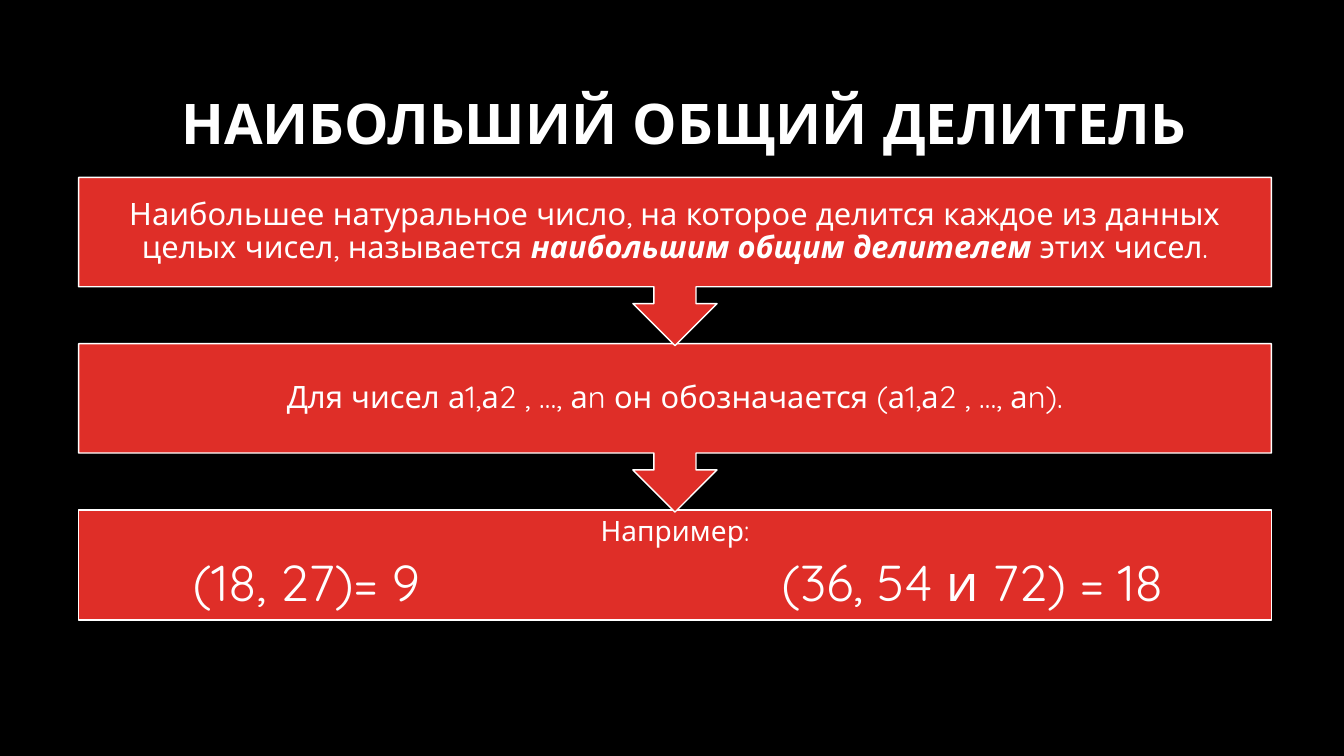
from dataclasses import dataclass

from lxml import etree
from pptx import Presentation
from pptx.dml.color import RGBColor
from pptx.enum.shapes import MSO_SHAPE
from pptx.enum.text import MSO_ANCHOR, PP_ALIGN
from pptx.oxml.ns import qn
from pptx.util import Emu, Pt

RECTANGLE = MSO_SHAPE.RECTANGLE
DOWN_CALLOUT = MSO_SHAPE.DOWN_ARROW_CALLOUT
MIDDLE = MSO_ANCHOR.MIDDLE
CENTER = PP_ALIGN.CENTER
LEFT = PP_ALIGN.LEFT

EMU_PER_PX = 9144
FONT = "Quicksand"
WHITE, RED, BLACK = "FFFFFF", "DF2E28", "000000"
STEP_LEFT, STEP_WIDTH = 78, 1183
FIRST_TOP, STEP_PITCH = 176, 165
TAB_STOPS = (97, 681)


@dataclass(frozen=True)
class Phrase:
    text: str
    emphasis: bool = False


@dataclass(frozen=True)
class Line:
    phrases: tuple[Phrase, ...]
    size: int
    align: PP_ALIGN = CENTER
    tabs: tuple[int, ...] = ()


@dataclass(frozen=True)
class Step:
    outline: MSO_SHAPE
    height: int
    inset: int
    lines: tuple[Line, ...]


STEPS = (
    Step(DOWN_CALLOUT, 167, 17, (
        Line((
            Phrase("Наибольшее натуральное число, на которое делится "
                   "каждое из данных целых чисел, называется "),
            Phrase("наибольшим общим делителем ", emphasis=True),
            Phrase("этих чисел."),
        ), 22),
    )),
    Step(DOWN_CALLOUT, 167, 17, (
        Line((Phrase("Для чисел а1,а2 , …, аn он обозначается (а1,а2 , …, аn)."),), 22),
    )),
    Step(RECTANGLE, 109, 16, (
        Line((Phrase("Например:"),), 20),
        Line((Phrase("\t(18, 27)= 9\t(36, 54 и 72) = 18"),), 36, LEFT, TAB_STOPS),
    )),
)


def px(length: int) -> Emu:
    return Emu(length * EMU_PER_PX)


def color(value: str) -> RGBColor:
    return RGBColor.from_string(value)


def add_tabs(paragraph, stops: tuple[int, ...]) -> None:
    tab_list = etree.SubElement(paragraph._p.get_or_add_pPr(), qn("a:tabLst"))
    for stop in stops:
        etree.SubElement(tab_list, qn("a:tab"), pos=str(px(stop)), algn="l")


def write_lines(frame, lines: tuple[Line, ...], inset: int) -> None:
    frame.word_wrap = True
    frame.vertical_anchor = MIDDLE
    frame.margin_left = frame.margin_right = px(inset)
    frame.margin_top = frame.margin_bottom = px(inset)
    frame.text = "\n".join("".join(p.text for p in line.phrases) for line in lines)
    for paragraph, line in zip(frame.paragraphs, lines):
        if line.tabs:
            add_tabs(paragraph, line.tabs)
        paragraph.alignment = line.align
        paragraph.line_spacing = 0.9
        if line is not lines[-1]:
            paragraph.space_after = Pt(line.size * 0.35)
        paragraph.text = ""
        for phrase in line.phrases:
            run = paragraph.add_run()
            run.text = phrase.text
            run.font.name = FONT
            run.font.size = Pt(line.size)
            run.font.color.rgb = color(WHITE)
            run.font.bold = run.font.italic = phrase.emphasis


def add_title(slide) -> None:
    title = slide.shapes.add_textbox(px(136), px(55), px(1084), px(141))
    heading = Line((Phrase("НАИБОЛЬШИЙ ОБЩИЙ ДЕЛИТЕЛЬ"),), 40)
    write_lines(title.text_frame, (heading,), 10)
    title.text_frame.paragraphs[0].runs[0].font.bold = True


def add_step(slide, step: Step, top: int) -> None:
    panel = slide.shapes.add_shape(
        step.outline, px(STEP_LEFT), px(top), px(STEP_WIDTH), px(step.height))
    panel.shadow.inherit = False
    panel.fill.solid()
    panel.fill.fore_color.rgb = color(RED)
    panel.line.color.rgb = color(WHITE)
    panel.line.width = Pt(1)
    write_lines(panel.text_frame, step.lines, step.inset)


def main() -> None:
    presentation = Presentation()
    presentation.slide_width, presentation.slide_height = px(1333), px(750)
    slide = presentation.slides.add_slide(presentation.slide_layouts[6])
    slide.background.fill.solid()
    slide.background.fill.fore_color.rgb = color(BLACK)
    add_title(slide)
    for index, step in reversed(list(enumerate(STEPS))):
        add_step(slide, step, FIRST_TOP + index * STEP_PITCH)
    presentation.save("out.pptx")


if __name__ == "__main__":
    main()
